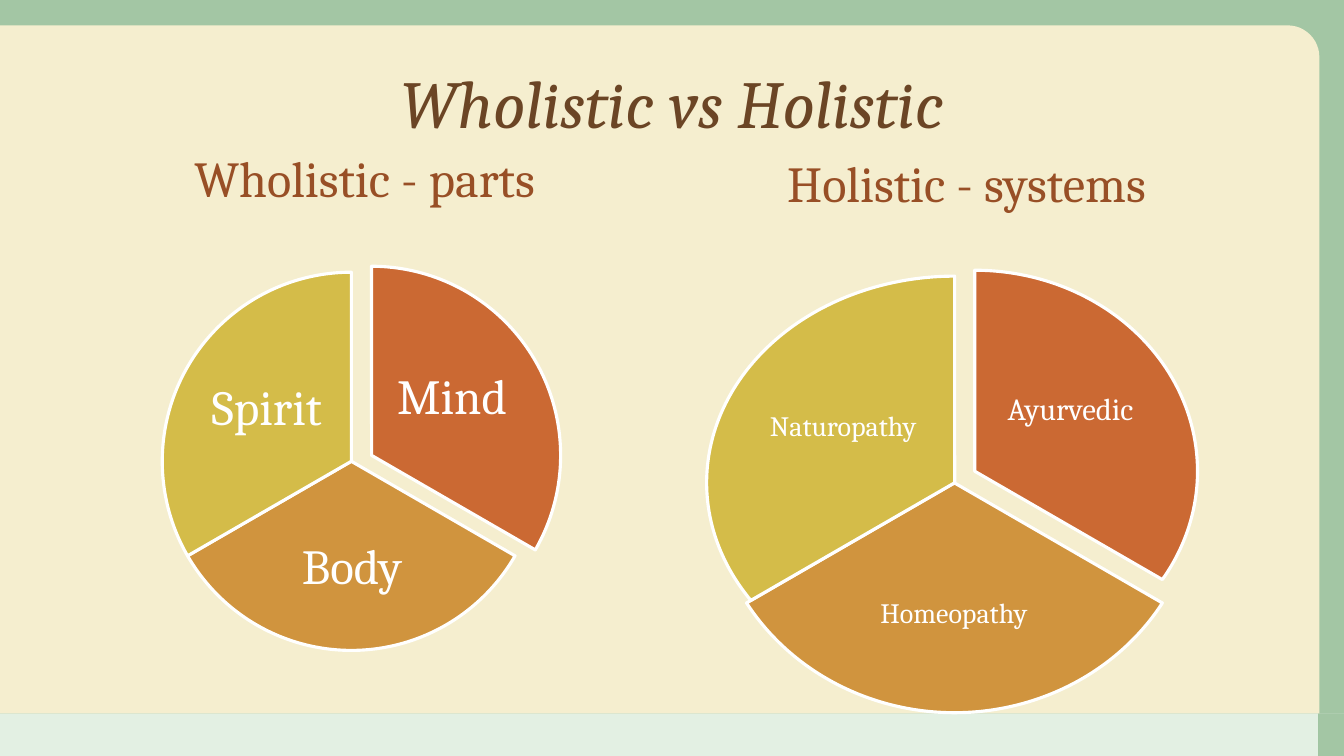
from dataclasses import dataclass

from lxml import etree
from pptx import Presentation
from pptx import util as u
from pptx.dml.color import RGBColor
from pptx.enum import shapes, text
from pptx.oxml.ns import qn


@dataclass(frozen=True)
class Theme:
    font: str = "Cambria"
    paper: str = "F5EECF"
    frame: str = "488E4A"
    footer: str = "D8EBD8"
    title: str = "6B4525"
    heading: str = "984F26"
    white: str = "FFFFFF"
    slices: tuple = ("CB6933", "D0943E", "D4BC49")
    title_size: int = 48
    heading_size: int = 36
    outline: float = 2.25


def lengths(box):
    return [u.Cm(length) for length in box]


class SlideBuilder:
    def __init__(self, slide, theme):
        self.slide = slide
        self.theme = theme

    def shape(self, preset, box, fill, *, alpha=None, outline=None, adjust=(), group=None):
        """Add a filled preset shape; alpha is its opacity in percent."""
        owner = group or self.slide
        shape = owner.shapes.add_shape(preset, *lengths(box))
        shape.shadow.inherit = False
        for index, value in enumerate(adjust):
            shape.adjustments[index] = value
        shape.fill.solid()
        shape.fill.fore_color.rgb = RGBColor.from_string(fill)
        if alpha is not None:
            color = shape.fill._xPr.find(qn("a:solidFill"))[0]
            etree.SubElement(color, qn("a:alpha")).set("val", str(alpha * 1000))
        if outline:
            shape.line.color.rgb = RGBColor.from_string(outline)
            shape.line.width = u.Pt(self.theme.outline)
        else:
            shape.line.fill.background()

    def text(self, words, box, *, size, color, italic=False, inset=None,
             anchor=text.MSO_ANCHOR.MIDDLE, group=None):
        owner = group or self.slide
        frame = owner.shapes.add_textbox(*lengths(box)).text_frame
        frame.word_wrap = True
        frame.vertical_anchor = anchor
        if inset is not None:
            frame.margin_left = frame.margin_right = u.Cm(inset)
            frame.margin_top = frame.margin_bottom = u.Cm(inset)
        paragraph = frame.paragraphs[0]
        paragraph.alignment = text.PP_ALIGN.CENTER
        paragraph.line_spacing = 0.9
        run = paragraph.add_run()
        run.text = words
        run.font.name = self.theme.font
        run.font.size = u.Pt(size)
        run.font.italic = italic
        run.font.color.rgb = RGBColor.from_string(color)

    def pie(self, slices, inset):
        """Draw equal slices clockwise from the top, each with its own box and label."""
        group = self.slide.shapes.add_group_shape()
        sweep = 360 / len(slices)
        for index, (label, size, slice_box, label_box) in enumerate(slices):
            start = 270 + index * sweep
            # Angles are stored in 60000ths of a degree, adjustments in 100000ths.
            angles = [angle % 360 * 0.6 for angle in (start, start + sweep)]
            self.shape(shapes.MSO_SHAPE.PIE, slice_box, self.theme.slices[index],
                       outline=self.theme.white, adjust=angles, group=group)
            self.text(label, label_box, size=size, color=self.theme.white,
                      inset=inset, group=group)

    def background(self):
        rectangle = shapes.MSO_SHAPE.RECTANGLE
        self.shape(rectangle, (0, 17.98, 33.22, 1.07), self.theme.footer, alpha=70)
        self.shape(rectangle, (33.22, 17.98, 0.65, 1.07), self.theme.frame, alpha=50)
        self.shape(rectangle, (0, 0, 33.87, 17.98), self.theme.frame, alpha=50)
        self.shape(shapes.MSO_SHAPE.ROUND_1_RECTANGLE, (0, 0.64, 33.25, 17.34),
                   self.theme.paper, adjust=[0.046])


WHOLISTIC = [
    ("Mind", 35, (4.6, 6.71, 9.53, 9.53), (9.78, 8.46, 3.23, 3.18)),
    ("Body", 35, (4.09, 6.86, 9.53, 9.53), (6.71, 12.85, 4.32, 2.95)),
    ("Spirit", 35, (4.09, 6.86, 9.53, 9.53), (5.11, 8.74, 3.23, 3.18)),
]
HOLISTIC = [
    ("Ayurvedic", 22, (18.95, 6.81, 11.23, 10.13), (25.07, 8.66, 3.81, 3.38)),
    ("Homeopathy", 20, (17.91, 6.38, 12.29, 11.58), (21.26, 13.69, 5.56, 3.58)),
    ("Naturopathy", 20, (17.81, 6.96, 12.5, 10.41), (19.13, 9.02, 4.24, 3.48)),
]


def main():
    presentation = Presentation()
    presentation.slide_width = u.Cm(33.87)
    presentation.slide_height = u.Cm(19.05)
    slide = presentation.slides.add_slide(presentation.slide_layouts[6])
    theme = Theme()
    builder = SlideBuilder(slide, theme)

    builder.background()
    builder.text("Wholistic vs Holistic", (3.61, 0.43, 26.67, 3.3), size=theme.title_size,
                 color=theme.title, italic=True, anchor=text.MSO_ANCHOR.BOTTOM)
    sides = [
        ("Wholistic - parts", (2.74, 3.51, 12.9, 2.11), WHOLISTIC, 0.13),
        ("Holistic - systems", (17.91, 3.63, 12.9, 2.11), HOLISTIC, 0.08),
    ]
    for heading, box, slices, inset in sides:
        builder.text(heading, box, size=theme.heading_size, color=theme.heading)
        builder.pie(slices, inset)

    presentation.save("out.pptx")


if __name__ == "__main__":
    main()
